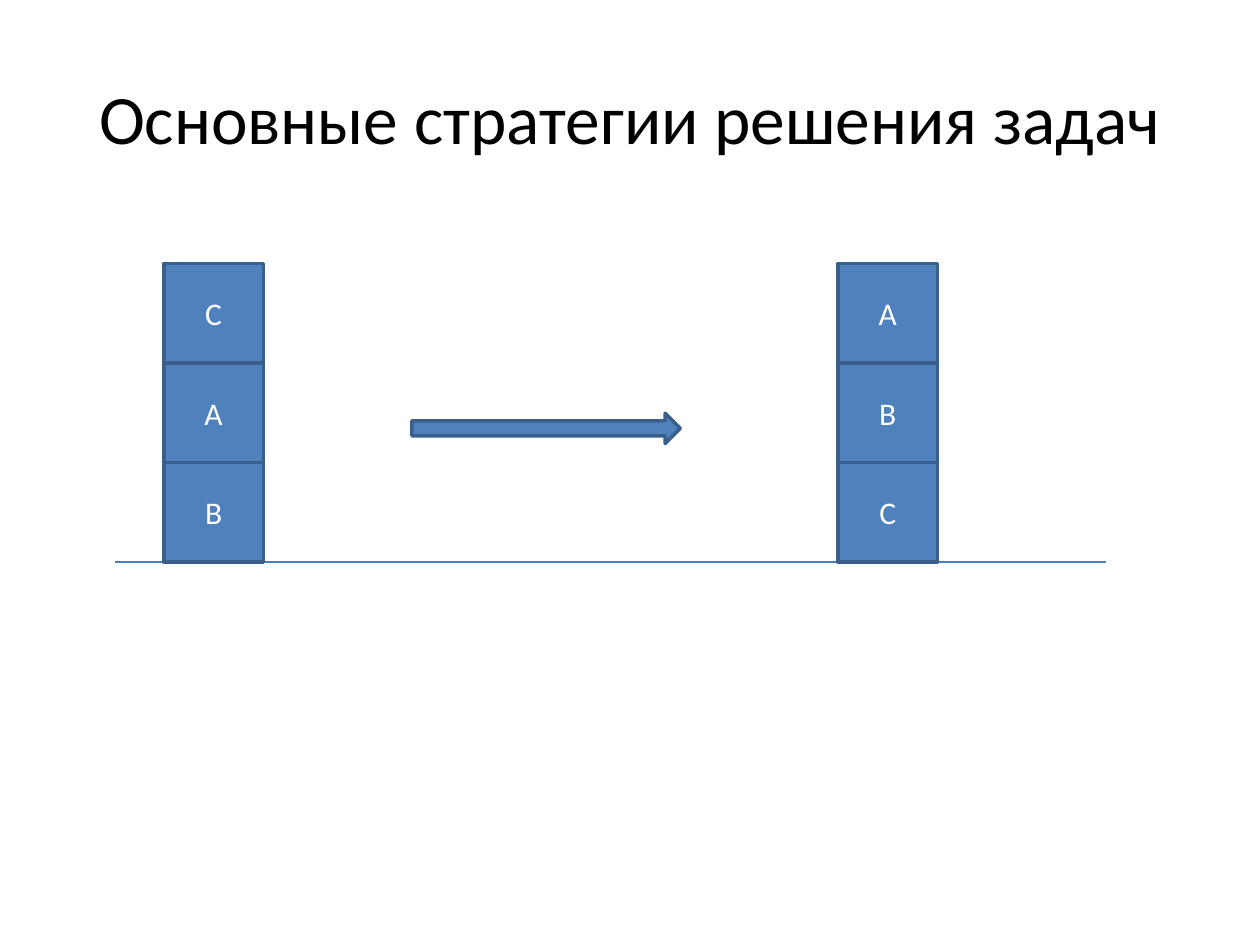
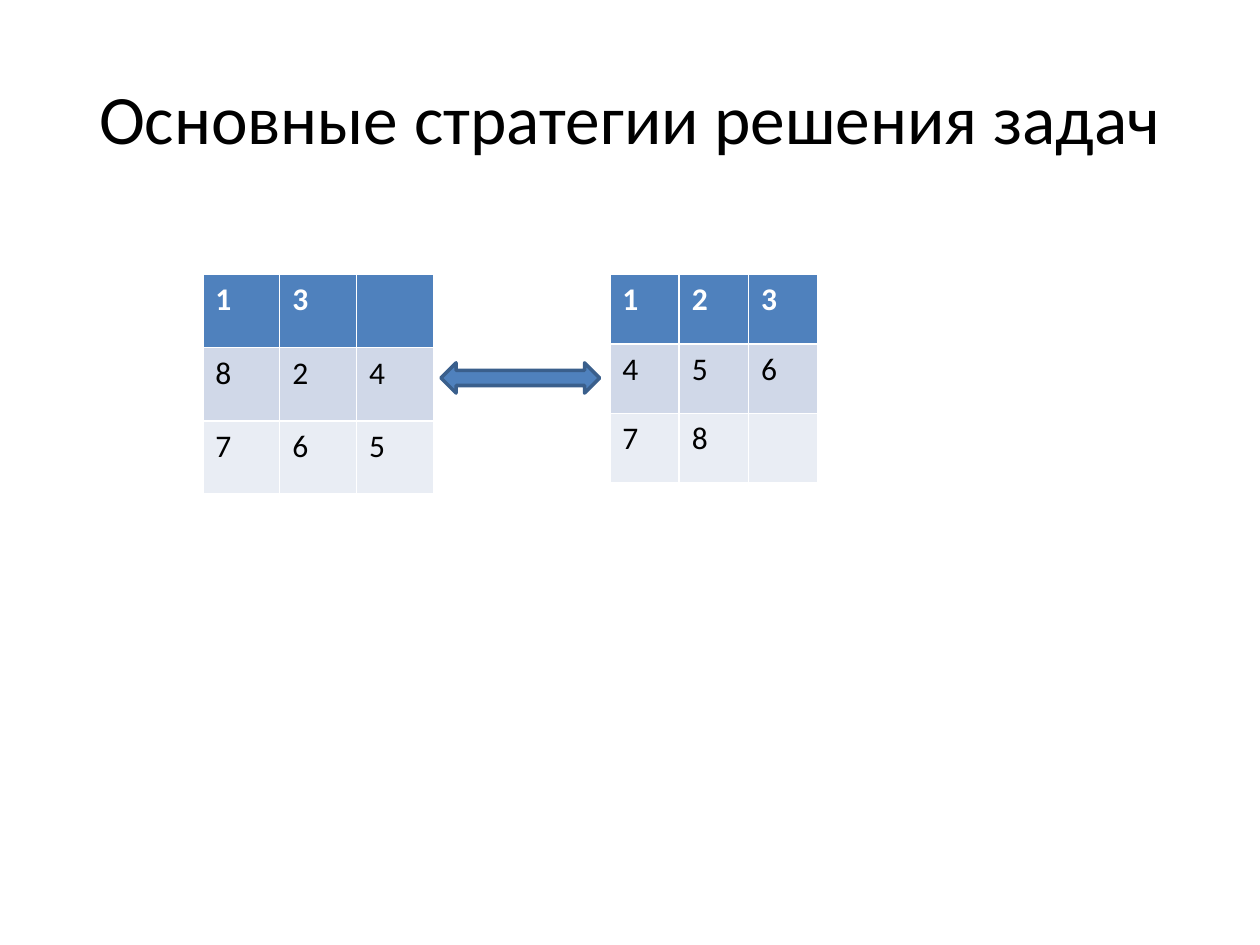
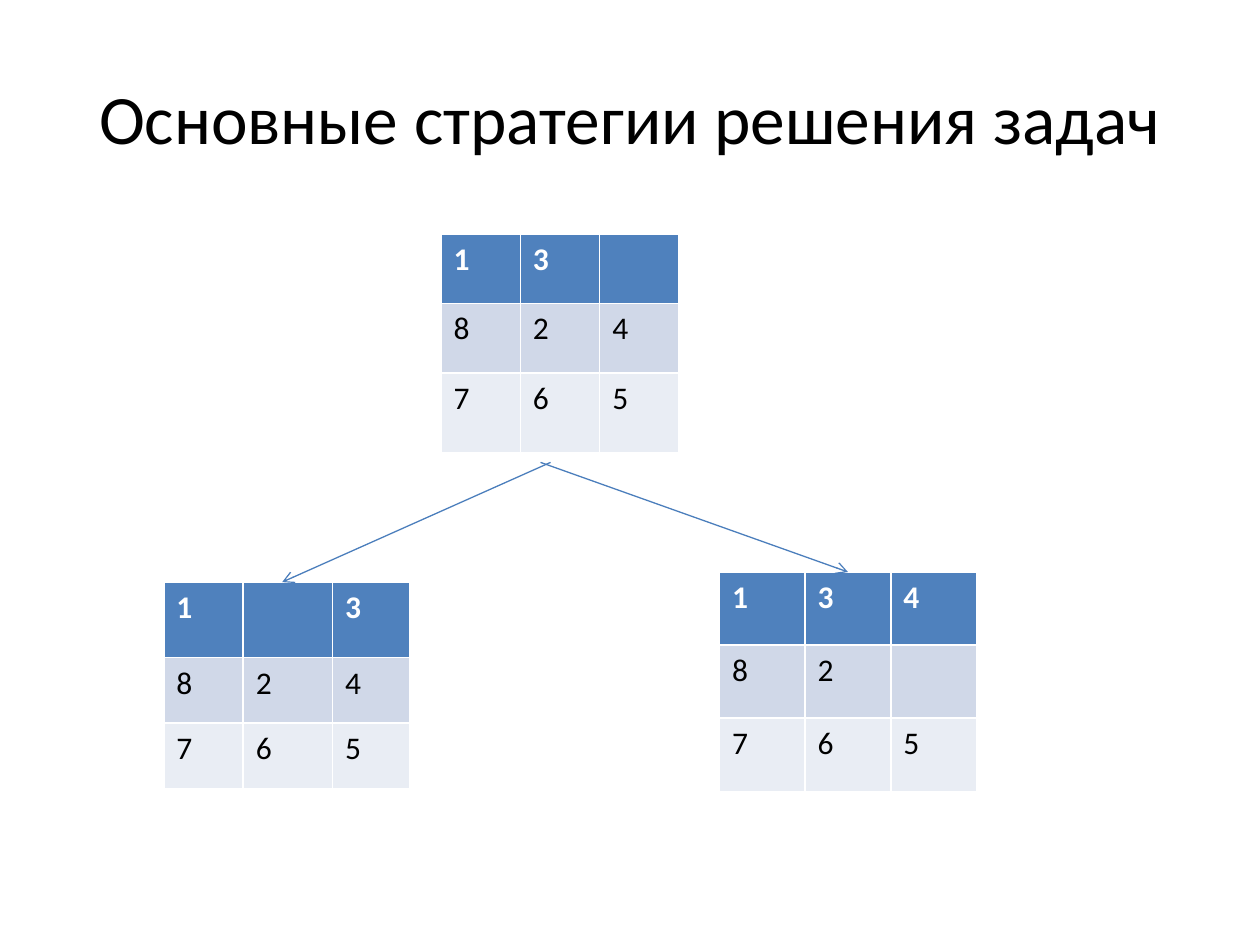
import pptx
import pptx.dml.color
import pptx.enum.shapes
import pptx.enum.text
import pptx.oxml.ns
import pptx.util
from lxml import etree
from pptx.util import Inches

SHAPE = pptx.enum.shapes.MSO_SHAPE
TITLE = "Основные стратегии решения задач"
START = ["13 ", "824", "765"]


def rgb(value):
    return pptx.dml.color.RGBColor.from_string(value)


class Deck:
    FONT = "Calibri"
    BLUE, OUTLINE, LINE = "4F81BD", "3A5F8C", "4B7EBC"
    WHITE, BLACK = "FFFFFF", "000000"
    ROW_FILLS = [BLUE, "D0D8E8", "E9EDF4"]

    def __init__(self):
        self.prs = pptx.Presentation()
        self.prs.slide_width = Inches(10)
        self.prs.slide_height = Inches(7.5)
        self.slide = None

    def new_slide(self, title):
        self.slide = self.prs.slides.add_slide(self.prs.slide_layouts[6])
        box = self.slide.shapes.add_textbox(
            Inches(0.5), Inches(0.3), Inches(9), Inches(1.25))
        self.set_text(box.text_frame, title, 39.6, self.BLACK, centred=True)

    def set_text(self, tf, text, size, colour, bold=False, centred=False):
        tf.text = text
        tf.word_wrap = True
        p = tf.paragraphs[0]
        if centred:
            tf.vertical_anchor = pptx.enum.text.MSO_ANCHOR.MIDDLE
            p.alignment = pptx.enum.text.PP_ALIGN.CENTER
        for r in p.runs:
            r.font.name = self.FONT
            r.font.size = pptx.util.Pt(size)
            r.font.bold = bold
            r.font.color.rgb = rgb(colour)

    def shape(self, kind, left, top, width, height, text=""):
        sp = self.slide.shapes.add_shape(
            kind, Inches(left), Inches(top), Inches(width), Inches(height))
        sp.shadow.inherit = False
        sp.fill.solid()
        sp.fill.fore_color.rgb = rgb(self.BLUE)
        sp.line.color.rgb = rgb(self.OUTLINE)
        sp.line.width = pptx.util.Pt(2)
        if text:
            self.set_text(sp.text_frame, text, 18, self.WHITE, centred=True)

    def stack(self, left, ground, letters, side=0.79):
        """Pile square blocks on the ground, letters given from the bottom up."""
        for level, letter in enumerate(letters, 1):
            self.shape(SHAPE.RECTANGLE, left, ground - level * side, side, side, letter)

    def line(self, x1, y1, x2, y2, arrow=False):
        cxn = self.slide.shapes.add_connector(
            pptx.enum.shapes.MSO_CONNECTOR.STRAIGHT,
            Inches(x1), Inches(y1), Inches(x2), Inches(y2))
        cxn.line.color.rgb = rgb(self.LINE)
        cxn.line.width = pptx.util.Pt(0.75)
        sp_pr = cxn.element.spPr
        if arrow:
            ln = sp_pr.find(pptx.oxml.ns.qn("a:ln"))
            etree.SubElement(ln, pptx.oxml.ns.qn("a:tailEnd"), type="arrow")
        etree.SubElement(sp_pr, pptx.oxml.ns.qn("a:effectLst"))

    def puzzle(self, left, top, widths, heights, rows):
        """Draw a puzzle board; each row is a string and a space is the gap."""
        table = self.slide.shapes.add_table(
            len(heights), len(widths), Inches(left), Inches(top),
            Inches(sum(widths)), Inches(sum(heights))).table
        for column, width in zip(table.columns, widths):
            column.width = Inches(width)
        for i, (height, tiles) in enumerate(zip(heights, rows)):
            table.rows[i].height = Inches(height)
            header = i == 0
            for j, tile in enumerate(tiles):
                cell = table.cell(i, j)
                cell.fill.solid()
                cell.fill.fore_color.rgb = rgb(self.ROW_FILLS[i])
                self.set_text(cell.text_frame, tile.strip(), 18,
                              self.WHITE if header else self.BLACK, bold=header)


def blocks_slide(deck):
    deck.new_slide(TITLE)
    ground = 4.46
    deck.line(0.91, ground, 8.78, ground)
    deck.stack(1.3, ground, "ВАС")
    deck.stack(6.65, ground, "СВА")
    deck.shape(SHAPE.RIGHT_ARROW, 3.27, 3.28, 2.13, 0.24)


def goal_slide(deck):
    deck.new_slide(TITLE)
    deck.puzzle(1.61, 2.18, [0.61] * 3, [0.58] * 3, START)
    deck.puzzle(4.84, 2.18, [0.55] * 3, [0.55] * 3, ["123", "456", "78 "])
    deck.shape(SHAPE.LEFT_RIGHT_ARROW, 3.5, 2.88, 1.26, 0.24)


def moves_slide(deck):
    deck.new_slide(TITLE)
    deck.puzzle(3.5, 1.86, [0.63] * 3, [0.55, 0.55, 0.63], START)
    deck.puzzle(1.3, 4.62, [0.63, 0.71, 0.61], [0.6, 0.52, 0.52], ["1 3", "824", "765"])
    deck.puzzle(5.71, 4.54, [0.68] * 3, [0.58] * 3, ["134", "82 ", "765"])
    deck.line(4.37, 3.67, 2.24, 4.62, arrow=True)
    deck.line(4.29, 3.67, 6.73, 4.54, arrow=True)


def main():
    deck = Deck()
    blocks_slide(deck)
    goal_slide(deck)
    moves_slide(deck)
    deck.prs.save("out.pptx")


if __name__ == "__main__":
    main()
